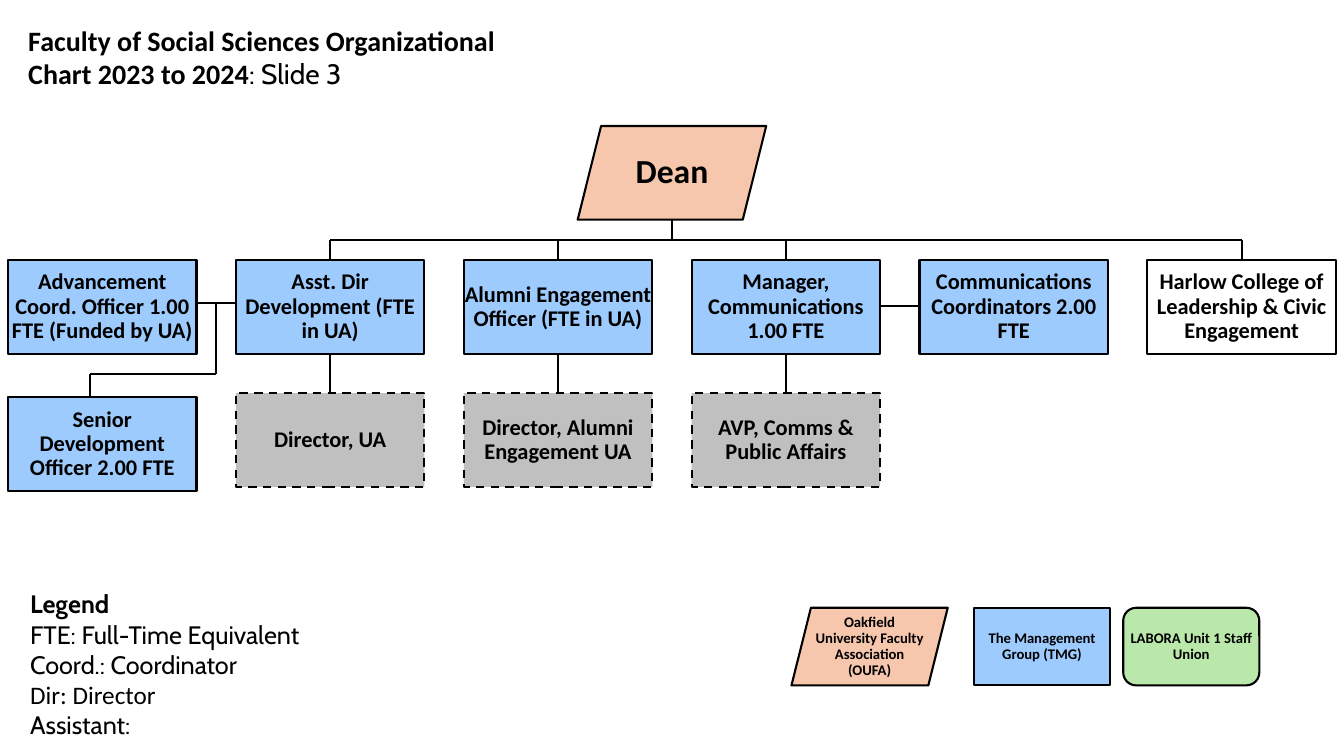
"""Build the faculty organizational chart slide."""
from dataclasses import dataclass

from lxml.etree import SubElement
from pptx import Presentation
from pptx.dml.color import RGBColor
from pptx.enum.dml import MSO_LINE
from pptx.enum.shapes import MSO_CONNECTOR, MSO_SHAPE
from pptx.enum.text import MSO_ANCHOR, PP_ALIGN
from pptx.oxml.ns import qn
from pptx.util import Inches, Pt


@dataclass(frozen=True)
class Theme:
    black: RGBColor = RGBColor.from_string("000000")
    white: RGBColor = RGBColor.from_string("FFFFFF")
    faculty: RGBColor = RGBColor.from_string("F6C6AD")
    management: RGBColor = RGBColor.from_string("9DCBFD")
    staff: RGBColor = RGBColor.from_string("BAE8AA")
    external: RGBColor = RGBColor.from_string("C0C0C0")
    heading_font: str = "Calibri"
    body_font: str = "Cabin"
    title_size: Pt = Pt(20)
    legend_size: Pt = Pt(18)
    dean_size: Pt = Pt(24)
    box_size: Pt = Pt(16)
    key_size: Pt = Pt(10.5)
    line_width: Pt = Pt(1.5)


theme = Theme()


def add_run(paragraph, text, size, font, bold):
    run = paragraph.add_run()
    run.text = text
    run.font.size = size
    run.font.name = font
    run.font.bold = bold
    run.font.color.rgb = theme.black


def add_box(preset, left, top, width, height, fill, text, size, margin=0.01):
    shape = slide.shapes.add_shape(
        preset, Inches(left), Inches(top), Inches(width), Inches(height))
    shape.shadow.inherit = False
    shape.fill.solid()
    shape.fill.fore_color.rgb = fill
    shape.line.color.rgb = theme.black
    shape.line.width = theme.line_width
    frame = shape.text_frame
    frame.word_wrap = True
    frame.vertical_anchor = MSO_ANCHOR.MIDDLE
    frame.margin_left = frame.margin_right = Inches(margin)
    frame.margin_top = frame.margin_bottom = Inches(margin)
    paragraph = frame.paragraphs[0]
    paragraph.alignment = PP_ALIGN.CENTER
    paragraph.line_spacing = 0.9
    add_run(paragraph, text, size, theme.heading_font, True)
    return shape


presentation = Presentation()
presentation.slide_width = Inches(13.33)
presentation.slide_height = Inches(7.5)
slide = presentation.slides.add_slide(presentation.slide_layouts[5])

title = slide.shapes.title
title.left, title.top = Inches(0.18), Inches(0.18)
title.width, title.height = Inches(5.11), Inches(0.77)
title.text_frame.word_wrap = True
title.text_frame.vertical_anchor = MSO_ANCHOR.TOP
title_paragraph = title.text_frame.paragraphs[0]
title_paragraph.alignment = PP_ALIGN.LEFT
add_run(title_paragraph, "Faculty of Social Sciences Organizational Chart 2023 to 2024",
        theme.title_size, theme.heading_font, True)
add_run(title_paragraph, ": Slide 3", theme.title_size, theme.body_font, False)

legend = slide.shapes.add_textbox(Inches(0.2), Inches(5.79), Inches(4.78), Inches(1.62))
legend.text_frame.word_wrap = True
legend_lines = [
    ("Legend", theme.body_font, True),
    ("FTE: Full-Time Equivalent", theme.body_font, False),
    ("Coord.: Coordinator", theme.body_font, False),
    ("Dir: Director", theme.heading_font, False),
    ("Assistant:", theme.body_font, False),
]
for index, (text, font, bold) in enumerate(legend_lines):
    paragraphs = legend.text_frame
    paragraph = paragraphs.add_paragraph() if index else paragraphs.paragraphs[0]
    add_run(paragraph, text, theme.legend_size, font, bold)

key_entries = [
    (MSO_SHAPE.PARALLELOGRAM, 7.85, 1.55, theme.faculty,
     "Oakfield University Faculty Association (OUFA)", 0.02),
    (MSO_SHAPE.RECTANGLE, 9.66, 1.35, theme.management, "The Management Group (TMG)", 0.01),
    (MSO_SHAPE.ROUNDED_RECTANGLE, 11.14, 1.35, theme.staff, "LABORA Unit 1 Staff Union", 0.01),
]
for preset, left, width, fill, text, margin in key_entries:
    add_box(preset, left, 6.03, width, 0.77, fill, text, theme.key_size, margin)

box_width, box_height = 1.87, 0.93
column_lefts = [0.08 + 2.26 * column for column in range(6)]
centres = [left + box_width / 2 for left in column_lefts]
dean_left, dean_top = 5.73, 1.25
dean_centre, dean_bottom = dean_left + box_width / 2, dean_top + box_height
bus_y, report_top, external_top, senior_top = 2.38, 2.58, 3.9, 3.94
report_bottom = report_top + box_height
branch_x, branch_y, advancement_y, communications_y = 2.14, 3.71, 3.01, 3.04

segments = [
    (dean_centre, dean_bottom, dean_centre, bus_y),
    (centres[1], bus_y, centres[5], bus_y),
    (column_lefts[0] + box_width, advancement_y, column_lefts[1], advancement_y),
    (branch_x, advancement_y, branch_x, branch_y),
    (branch_x, branch_y, 0.89, branch_y),
    (0.89, branch_y, 0.89, senior_top),
    (column_lefts[3] + box_width, communications_y, column_lefts[4], communications_y),
]
segments += [(centres[column], bus_y, centres[column], report_top) for column in (1, 2, 3, 5)]
segments += [(centres[column], report_bottom, centres[column], external_top)
             for column in (1, 2, 3)]
for segment in segments:
    connector = slide.shapes.add_connector(
        MSO_CONNECTOR.STRAIGHT, *[Inches(value) for value in segment])
    connector.line.color.rgb = theme.black
    connector.line.width = theme.line_width
    SubElement(connector._element.spPr, qn("a:effectLst"))

add_box(MSO_SHAPE.PARALLELOGRAM, dean_left, dean_top, box_width, box_height,
        theme.faculty, "Dean", theme.dean_size)

positions = [
    (0, report_top, theme.management, "Advancement Coord. Officer 1.00 FTE (Funded by UA)"),
    (1, report_top, theme.management, "Asst. Dir Development (FTE in UA)"),
    (2, report_top, theme.management, "Alumni Engagement Officer (FTE in UA)"),
    (3, report_top, theme.management, "Manager, Communications 1.00 FTE"),
    (4, report_top, theme.management, "Communications Coordinators 2.00 FTE"),
    (5, report_top, theme.white, "Harlow College of Leadership & Civic Engagement"),
    (0, senior_top, theme.management, "Senior Development Officer 2.00 FTE"),
    (1, external_top, theme.external, "Director, UA"),
    (2, external_top, theme.external, "Director, Alumni Engagement UA"),
    (3, external_top, theme.external, "AVP, Comms & Public Affairs"),
]
for column, top, fill, text in positions:
    box = add_box(MSO_SHAPE.RECTANGLE, column_lefts[column], top, box_width, box_height,
                  fill, text, theme.box_size)
    if fill == theme.external:
        box.line.dash_style = MSO_LINE.DASH

presentation.save("out.pptx")
